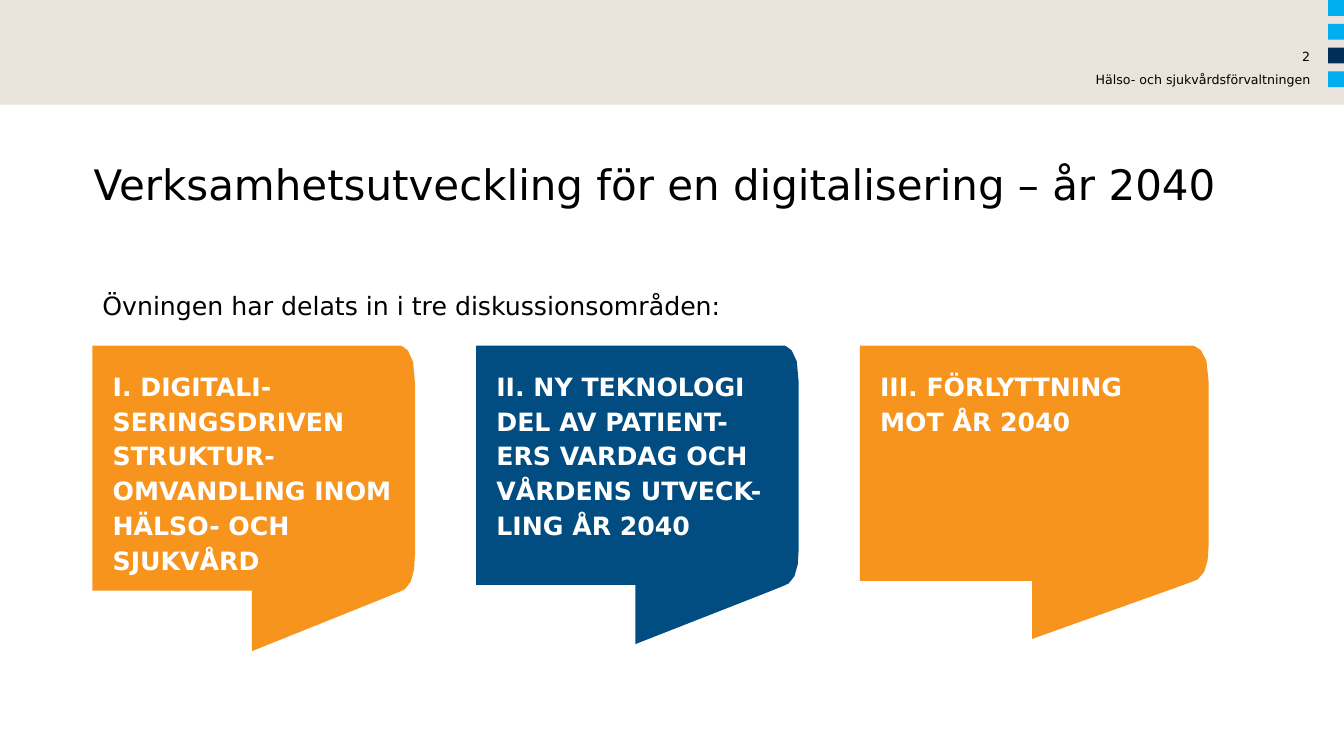
import pptx
import pptx.util
import pptx.dml.color
import pptx.enum.shapes
import pptx.enum.text

Cm = pptx.util.Cm
ALIGN = pptx.enum.text.PP_ALIGN
ANCHOR = pptx.enum.text.MSO_ANCHOR
FONT = "DejaVu Sans"
BUBBLE_OUTLINE = [
    (95.6, 0), (0, 0), (0, 80.2), (49.4, 80.2), (49.4, 100),
    (90, 82.8), (95.3, 80.5), (96.9, 79.7), (98.7, 77.2), (99.7, 73.3),
    (100, 68), (100, 12.5), (99.4, 5.3), (97.8, 1.6), (96.2, 0.3),
]


def rgb(value):
    return pptx.dml.color.RGBColor.from_string(value)


def paint(sp, color):
    sp.shadow.inherit = False
    sp.fill.solid()
    sp.fill.fore_color.rgb = rgb(color)
    sp.line.fill.background()


def write(sp, text, size, color="000000", bold=False, align=ALIGN.LEFT,
          margins=(0, 0, 0), spacing=1):
    tf = sp.text_frame
    tf.word_wrap = True
    tf.auto_size = pptx.enum.text.MSO_AUTO_SIZE.NONE
    tf.vertical_anchor = ANCHOR.TOP
    tf.margin_left, tf.margin_top, tf.margin_right = map(Cm, margins)
    tf.margin_bottom = 0
    p = tf.paragraphs[0]
    p.text = text
    p.alignment = align
    p.line_spacing = spacing
    p.space_before = pptx.util.Pt(0)
    p.font.name = FONT
    p.font.size = pptx.util.Pt(size)
    p.font.bold = bold
    p.font.color.rgb = rgb(color)


def add_rect(s, x, y, w, h, color):
    sp = s.shapes.add_shape(pptx.enum.shapes.MSO_SHAPE.RECTANGLE,
                            Cm(x), Cm(y), Cm(w), Cm(h))
    paint(sp, color)


def add_label(s, x, y, w, h, text, size, align=ALIGN.LEFT):
    sp = s.shapes.add_textbox(Cm(x), Cm(y), Cm(w), Cm(h))
    write(sp, text, size, align=align)


def add_header(s, x, y, w, h):
    add_rect(s, x, y, w, h, "E9E3DC")
    side = 0.4
    for i, color in enumerate(["00AEEF", "00AEEF", "002D5A", "00AEEF"]):
        add_rect(s, x + w - side, y + i * 0.6, side, side, color)
    for dy, text in [(1.24, "2"), (1.82, "Hälso- och sjukvårdsförvaltningen")]:
        add_label(s, x + w - 10.17, y + dy, 9.32, 0.36, text, 9, ALIGN.RIGHT)


def add_title(s, x, y, w, h, text):
    sp = s.shapes.title
    sp.left, sp.top, sp.width, sp.height = map(Cm, (x, y, w, h))
    write(sp, text, 30)


def add_bubble(s, x, y, w, h, text, color):
    points = [(Cm(x + w * px / 100), Cm(y + h * py / 100))
              for px, py in BUBBLE_OUTLINE]
    builder = s.shapes.build_freeform(*points[0])
    builder.add_line_segments(points[1:], close=True)
    sp = builder.convert_to_shape()
    paint(sp, color)
    write(sp, text, 18, "FFFFFF", True, margins=(0.51, 0.53, 0.56), spacing=1.15)


def add_topics(s, x, y, step):
    topics = [
        (8.13, 7.7, "F7941D", "I. DIGITALI-SERINGSDRIVEN STRUKTUR-OMVANDLING "
                              "INOM HÄLSO- OCH SJUKVÅRD"),
        (8.13, 7.52, "014C80", "II. NY TEKNOLOGI DEL AV PATIENT-ERS VARDAG "
                               "OCH VÅRDENS UTVECK-LING ÅR 2040"),
        (8.79, 7.39, "F7941D", "III. FÖRLYTTNING MOT ÅR 2040"),
    ]
    for i, (w, h, color, text) in enumerate(topics):
        add_bubble(s, x + i * step, y, w, h, text, color)


def main():
    prs = pptx.Presentation()
    prs.slide_width, prs.slide_height = Cm(33.87), Cm(19.05)
    s = prs.slides.add_slide(prs.slide_layouts[5])
    add_header(s, 0, 0, 33.87, 2.64)
    add_title(s, 2.36, 4, 30.68, 2.3,
              "Verksamhetsutveckling för en digitalisering – år 2040")
    add_label(s, 2.58, 7.32, 28, 0.8,
              "Övningen har delats in i tre diskussionsområden:", 18)
    add_topics(s, 2.33, 8.71, 9.67)
    prs.save("out.pptx")


if __name__ == "__main__":
    main()
